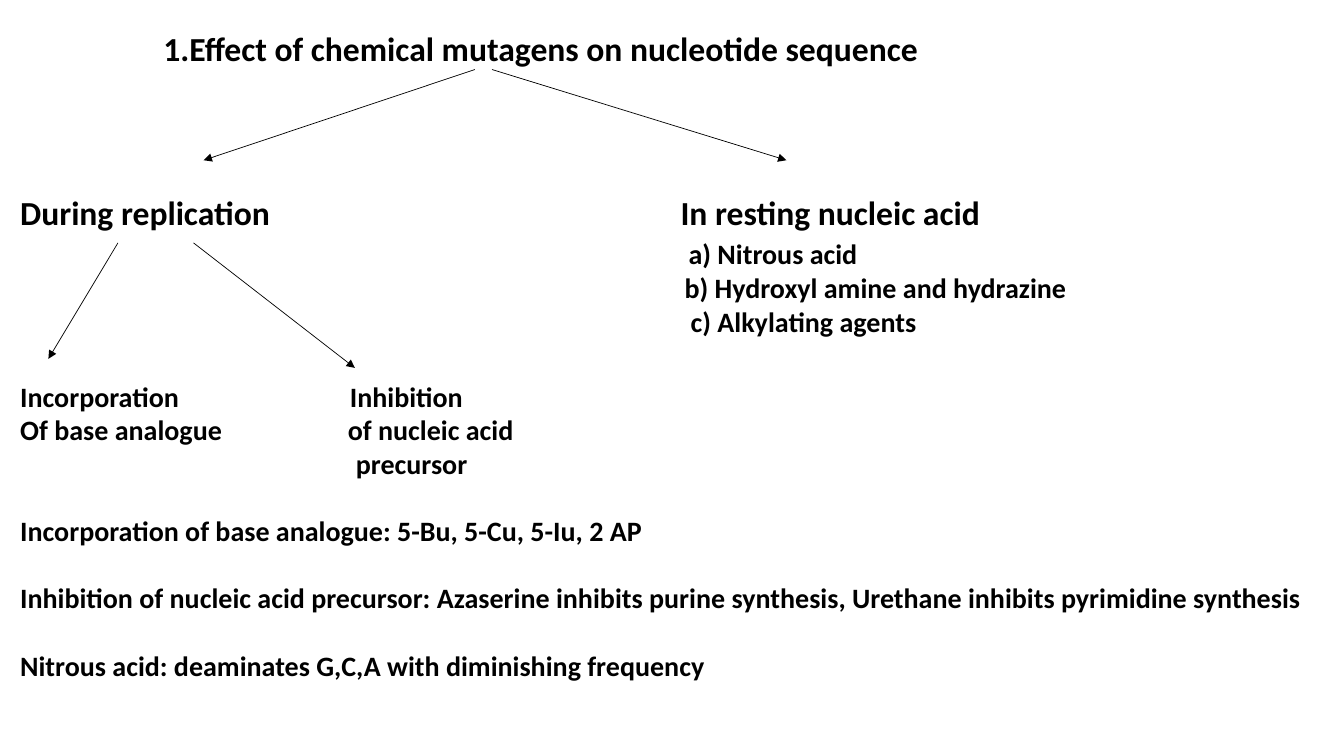
from lxml.etree import SubElement
from pptx import Presentation
from pptx.dml.color import RGBColor
from pptx.enum.shapes import MSO_CONNECTOR
from pptx.oxml.ns import qn
from pptx.util import Inches, Pt

THEME = {
    "font": "Calibri",
    "ink": RGBColor(0, 0, 0),
    "heading": Pt(24),
    "body": Pt(20),
    "arrow": Pt(0.5),
    "note_gap": Pt(24.4),
}

TEXT_BLOCKS = [
    {"at": (1.62, 0.28, 9, 0.41), "size": "heading",
     "lines": [("1.Effect of chemical mutagens on nucleotide sequence", 0)]},
    {"at": (0.2, 1.9, 4, 0.41), "size": "heading", "lines": [("During replication", 0)]},
    {"at": (6.75, 1.9, 5, 0.41), "size": "heading", "lines": [("In resting nucleic acid", 0)]},
    {"at": (6.75, 2.35, 5, 1.02), "size": "body",
     "lines": [("a) Nitrous acid", 0.08),
               ("b) Hydroxyl amine and hydrazine", 0.04),
               ("c) Alkylating agents", 0.1)]},
    {"at": (0.2, 3.76, 3, 0.68), "size": "body",
     "lines": [("Incorporation", 0), ("Of base analogue", 0)]},
    {"at": (3.45, 3.76, 3, 1.02), "size": "body",
     "lines": [("Inhibition", 0.02), ("of nucleic acid", 0), ("precursor", 0.08)]},
    {"at": (0.2, 5.09, 13, 1.7), "size": "body", "gap": "note_gap",
     "lines": [("Incorporation of base analogue: 5-Bu, 5-Cu, 5-Iu, 2 AP", 0),
               ("Inhibition of nucleic acid precursor: Azaserine inhibits purine synthesis, "
                "Urethane inhibits pyrimidine synthesis", 0),
               ("Nitrous acid: deaminates G,C,A with diminishing frequency", 0)]},
]

ARROWS = [
    ((4.71, 0.69), (2.02, 1.59)),
    ((4.88, 0.69), (7.8, 1.59)),
    ((1.17, 2.41), (0.48, 3.56)),
    ((1.92, 2.41), (3.52, 3.65)),
]


def add_text_block(slide, block):
    shape = slide.shapes.add_textbox(*map(Inches, block["at"]))
    text_frame = shape.text_frame
    text_frame.word_wrap = True
    text_frame.margin_left = text_frame.margin_right = 0
    text_frame.margin_top = text_frame.margin_bottom = 0
    text_frame.text = "\n".join(text for text, indent in block["lines"])
    for index, paragraph in enumerate(text_frame.paragraphs):
        indent = block["lines"][index][1]
        paragraph._p.get_or_add_pPr().set("marL", str(int(Inches(indent))))
        if index and "gap" in block:
            paragraph.space_before = THEME[block["gap"]]
        font = paragraph.runs[0].font
        font.name = THEME["font"]
        font.size = THEME[block["size"]]
        font.bold = True
        font.color.rgb = THEME["ink"]


def add_arrow(slide, start, end):
    connector = slide.shapes.add_connector(
        MSO_CONNECTOR.STRAIGHT, *map(Inches, start + end))
    connector.line.color.rgb = THEME["ink"]
    connector.line.width = THEME["arrow"]
    SubElement(connector.line._get_or_add_ln(), qn("a:tailEnd"), type="triangle")
    SubElement(connector._element.spPr, qn("a:effectLst"))


def main():
    presentation = Presentation()
    presentation.slide_width = Inches(13.33)
    presentation.slide_height = Inches(7.5)
    slide = presentation.slides.add_slide(presentation.slide_layouts[6])
    for block in TEXT_BLOCKS:
        add_text_block(slide, block)
    for start, end in ARROWS:
        add_arrow(slide, start, end)
    presentation.save("out.pptx")


if __name__ == "__main__":
    main()
